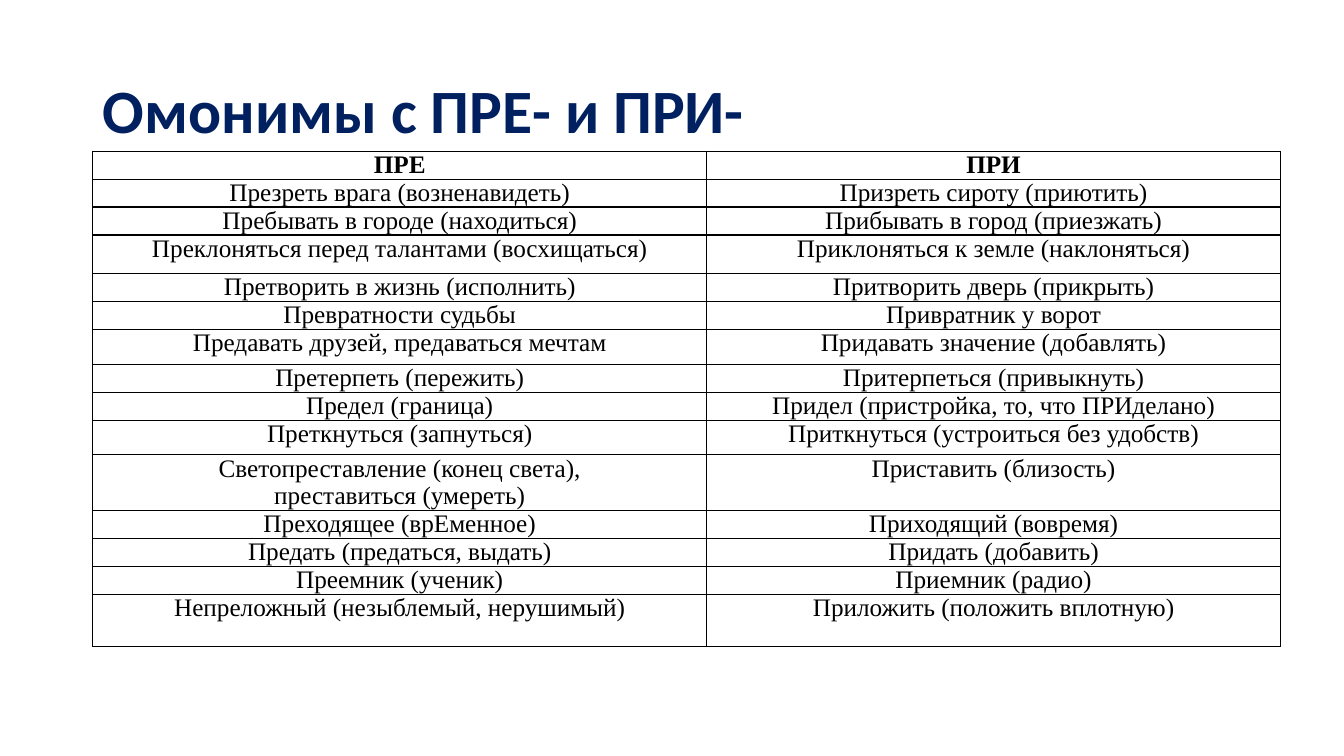
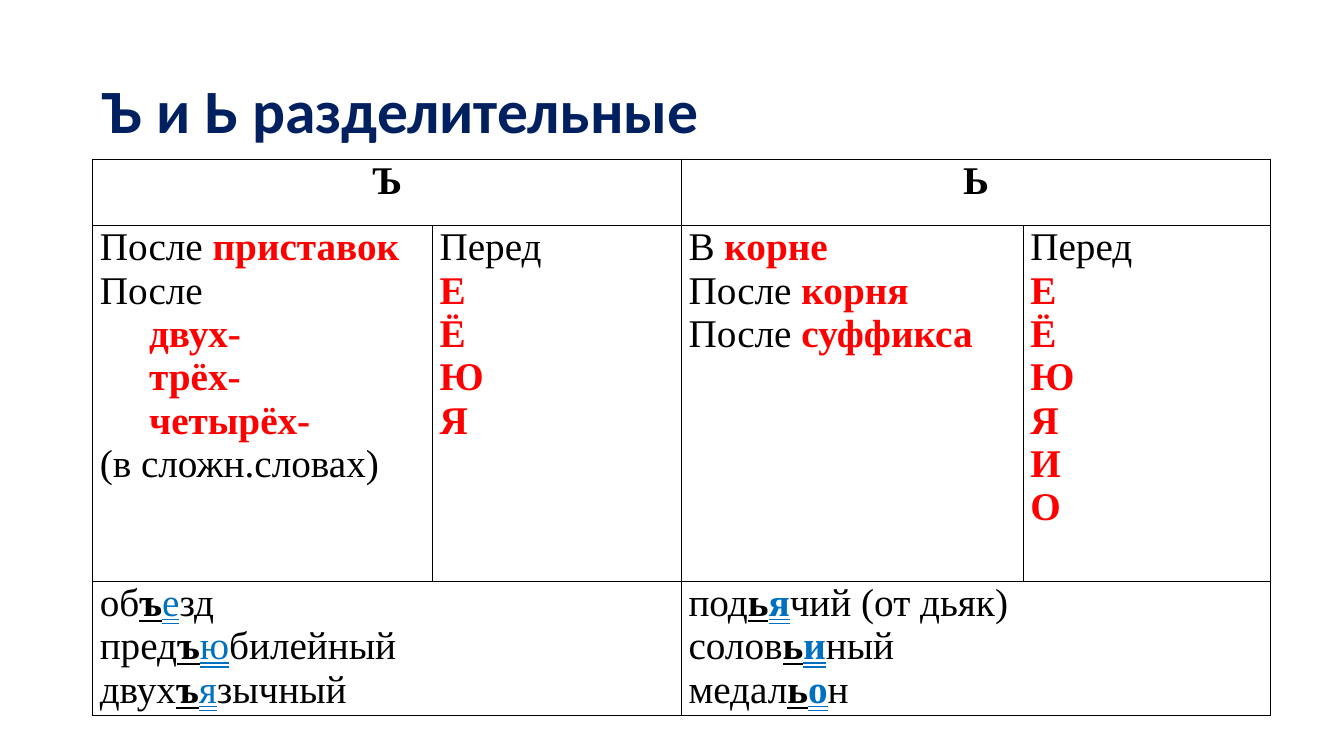
import dataclasses

import pptx
import pptx.dml.color
import pptx.enum.text
import pptx.oxml
import pptx.oxml.ns
import pptx.util

Inches = pptx.util.Inches
Pt = pptx.util.Pt
RGBColor = pptx.dml.color.RGBColor
Align = pptx.enum.text.PP_ALIGN
Underline = pptx.enum.text.MSO_UNDERLINE

NAVY = RGBColor(0x00, 0x20, 0x60)
BLACK = RGBColor(0x00, 0x00, 0x00)
RED = RGBColor(0xFF, 0x00, 0x00)
BLUE = RGBColor(0x00, 0x70, 0xC0)
TITLE_FONT, TABLE_FONT = "Calibri", "Times New Roman"
LEFT = 0.92


@dataclasses.dataclass(frozen=True)
class Style:
    color: RGBColor = BLACK
    bold: bool = False
    underline: object = None
    indent: float = 0


PLAIN = Style()
BOLD = Style(bold=True)
KEY = Style(RED, bold=True)
PREFIX = Style(RED, bold=True, indent=0.49)
SIGN = Style(bold=True, underline=Underline.SINGLE_LINE)
VOWEL = Style(BLUE, underline=Underline.DOUBLE_LINE)
BOLD_VOWEL = Style(BLUE, bold=True, underline=Underline.DOUBLE_LINE)

# Homonyms: left word, right word, row height
HOMONYMS_TITLE = "Омонимы с ПРЕ- и ПРИ-"
HOMONYMS = [
    ("ПРЕ", "ПРИ", 0.27),
    ("Презреть врага (возненавидеть)", "Призреть сироту (приютить)", 0.27),
    ("Пребывать в городе (находиться)", "Прибывать в город (приезжать)", 0.27),
    ("Преклоняться перед талантами (восхищаться)", "Приклоняться к земле (наклоняться)", 0.38),
    ("Претворить в жизнь (исполнить)", "Притворить дверь (прикрыть)", 0.27),
    ("Превратности судьбы", "Привратник у ворот", 0.27),
    ("Предавать друзей, предаваться мечтам", "Придавать значение (добавлять)", 0.35),
    ("Претерпеть (пережить)", "Притерпеться (привыкнуть)", 0.27),
    ("Предел (граница)", "Придел (пристройка, то, что ПРИделано)", 0.27),
    ("Преткнуться (запнуться)", "Приткнуться (устроиться без удобств)", 0.34),
    ("Светопреставление (конец света),\nпреставиться (умереть)", "Приставить (близость)", 0.55),
    ("Преходящее (врЕменное)", "Приходящий (вовремя)", 0.27),
    ("Предать (предаться, выдать)", "Придать (добавить)", 0.27),
    ("Преемник (ученик)", "Приемник (радио)", 0.27),
    ("Непреложный (незыблемый, нерушимый)", "Приложить (положить вплотную)", 0.52),
]
HOMONYM_COLUMNS = [6.09, 5.69]

# Separating signs: a cell is a list of lines, a line is a list of (text, style)
SIGNS_TITLE = "Ъ и Ь разделительные"
SIGN_COLUMNS = [3.37, 2.47, 3.39, 2.45]
SIGN_ROWS = [0.66, 3.53, 1.33]
HARD_PLACES = [
    [("После ", PLAIN), ("приставок", KEY)],
    [("После", PLAIN)],
    [("двух-", PREFIX)],
    [("трёх-", PREFIX)],
    [("четырёх-", PREFIX)],
    [("(в сложн.словах)", PLAIN)],
]
SOFT_PLACES = [
    [("В ", PLAIN), ("корне", KEY)],
    [("После ", PLAIN), ("корня", KEY)],
    [("После ", PLAIN), ("суффикса", KEY)],
]
HARD_VOWELS, SOFT_VOWELS = "ЕЁЮЯ", "ЕЁЮЯИО"
HARD_EXAMPLES = [("об", "ъ", "е", "зд"), ("пред", "ъ", "ю", "билейный"),
                 ("двух", "ъ", "я", "зычный")]
SOFT_EXAMPLES = [("под", "ь", "я", "чий (от дьяк)"), ("солов", "ь", "и", "ный"),
                 ("медал", "ь", "о", "н")]


def before_vowels(vowels):
    return [[("Перед", PLAIN)]] + [[(vowel, KEY)] for vowel in vowels]


def example_lines(words, vowel_style):
    styles = (PLAIN, SIGN, vowel_style, PLAIN)
    return [list(zip(word, styles)) for word in words]


def add_page(deck, title):
    page = deck.slides.add_slide(deck.slide_layouts[5])
    box = page.shapes.title
    box.left, box.top, box.width, box.height = map(Inches, (LEFT, 0.4, 11.5, 1.45))
    frame = box.text_frame
    frame.text = title
    frame.word_wrap = True
    frame.auto_size = pptx.enum.text.MSO_AUTO_SIZE.NONE
    frame.vertical_anchor = pptx.enum.text.MSO_ANCHOR.MIDDLE
    para = frame.paragraphs[0]
    para.alignment = Align.LEFT
    para.line_spacing = 0.9
    para.font.name, para.font.size = TITLE_FONT, Pt(44)
    para.font.bold = True
    para.font.color.rgb = NAVY
    return page


def draw_borders(cell):
    properties = cell._tc.get_or_add_tcPr()
    for index, side in enumerate(("lnL", "lnR", "lnT", "lnB")):
        properties.insert(index, pptx.oxml.parse_xml(
            f'<a:{side} {pptx.oxml.ns.nsdecls("a")} w="{Pt(1)}">'
            f'<a:solidFill><a:srgbClr val="{BLACK}"/></a:solidFill></a:{side}>'))


def add_grid(page, top, columns, rows):
    table = page.shapes.add_table(
        len(rows), len(columns), Inches(LEFT), Inches(top),
        Inches(sum(columns)), Inches(sum(rows))).table
    table.first_row = table.horz_banding = False
    for column, width in zip(table.columns, columns):
        column.width = Inches(width)
    for row, height in zip(table.rows, rows):
        row.height = Inches(height)
    for cell in table.iter_cells():
        cell.margin_left = cell.margin_right = Inches(0.07)
        cell.margin_top = cell.margin_bottom = 0
        cell.fill.background()
        draw_borders(cell)
    return table


def fill_cell(cell, lines, size, alignment):
    frame = cell.text_frame
    for number, line in enumerate(lines):
        para = frame.add_paragraph() if number else frame.paragraphs[0]
        para.alignment = alignment
        para.font.name, para.font.size = TABLE_FONT, Pt(size)
        for text, style in line:
            span = para.add_run()
            span.text = text
            span.font.name, span.font.size = TABLE_FONT, Pt(size)
            span.font.bold = style.bold
            span.font.color.rgb = style.color
            span.font.underline = style.underline
            if style.indent:
                para._p.get_or_add_pPr().set("marL", str(Inches(style.indent)))


def build_homonyms(deck):
    page = add_page(deck, HOMONYMS_TITLE)
    table = add_grid(page, 1.5, HOMONYM_COLUMNS, [row[-1] for row in HOMONYMS])
    for row, (*words, _) in enumerate(HOMONYMS):
        style = PLAIN if row else BOLD
        for column, word in enumerate(words):
            lines = [[(text, style)] for text in word.split("\n")]
            fill_cell(table.cell(row, column), lines, 18, Align.CENTER)


def build_signs(deck):
    page = add_page(deck, SIGNS_TITLE)
    table = add_grid(page, 1.58, SIGN_COLUMNS, SIGN_ROWS)
    halves = [
        ("Ъ", HARD_PLACES, HARD_VOWELS, example_lines(HARD_EXAMPLES, VOWEL)),
        ("Ь", SOFT_PLACES, SOFT_VOWELS, example_lines(SOFT_EXAMPLES, BOLD_VOWEL)),
    ]
    for half, (sign, places, vowels, examples) in enumerate(halves):
        column = 2 * half
        for row in (0, 2):
            table.cell(row, column).merge(table.cell(row, column + 1))
        fill_cell(table.cell(0, column), [[(sign, BOLD)]], 28, Align.CENTER)
        fill_cell(table.cell(1, column), places, 28, Align.JUSTIFY)
        fill_cell(table.cell(1, column + 1), before_vowels(vowels), 28, Align.JUSTIFY)
        fill_cell(table.cell(2, column), examples, 28, Align.JUSTIFY)


def main():
    deck = pptx.Presentation()
    deck.slide_width, deck.slide_height = Inches(13.33), Inches(7.5)
    build_homonyms(deck)
    build_signs(deck)
    deck.save("out.pptx")


if __name__ == "__main__":
    main()
